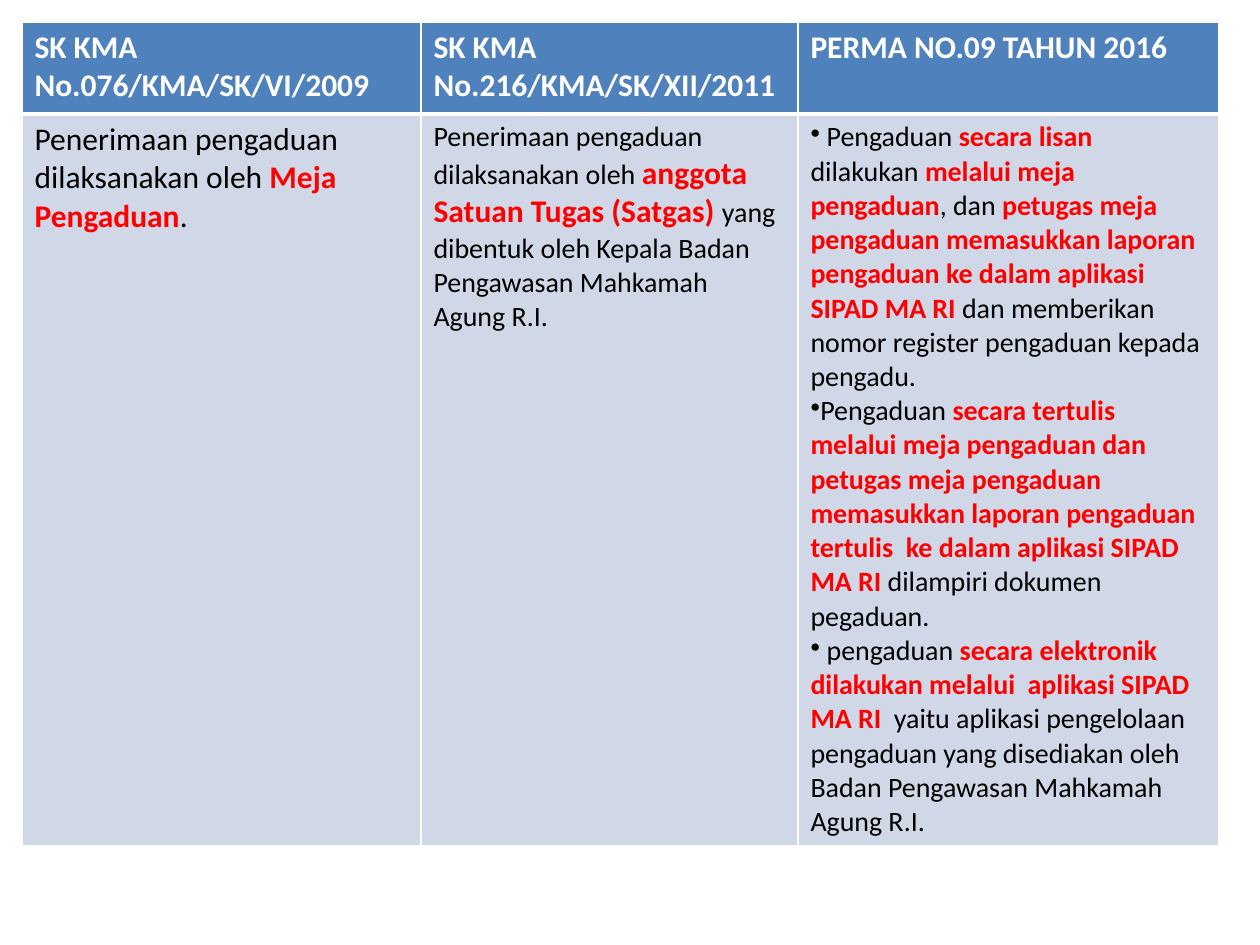
from lxml import etree
from pptx import Presentation
from pptx import util as u
from pptx.dml.color import RGBColor
from pptx.oxml import ns

PX = 914400 // 126
COLORS = {"header": "4F81BD", "body": "D0D8E8", "white": "FFFFFF",
          "plain": "000000", "emphasis": "FF0000"}
FONT = "Calibri"
LEFT, TOP = 22, 22
COLUMN_WIDTHS = [399, 377, 421]
ROW_HEIGHTS = [92, 721]
HEADER_SIZE = 18

HEADERS = ["SK KMA No.076/KMA/SK/VI/2009", "SK KMA No.216/KMA/SK/XII/2011",
           "PERMA NO.09 TAHUN 2016"]

# In each paragraph, plain and emphasised pieces alternate, plain first.
BODIES = [
    {"plain": 18, "emphasis": 18, "bullet": False, "paragraphs": [
        ["Penerimaan pengaduan dilaksanakan oleh ", "Meja Pengaduan", "."]]},
    {"plain": 16, "emphasis": 18, "bullet": False, "paragraphs": [
        ["Penerimaan pengaduan dilaksanakan oleh ",
         "anggota Satuan Tugas (Satgas) ",
         "yang dibentuk oleh Kepala Badan Pengawasan Mahkamah Agung R.I."]]},
    {"plain": 16, "emphasis": 16, "bullet": True, "paragraphs": [
        [" Pengaduan ", "secara lisan ", "dilakukan ", "melalui meja pengaduan", ", dan ",
         "petugas meja pengaduan memasukkan laporan pengaduan ke dalam aplikasi SIPAD MA RI ",
         "dan memberikan nomor register pengaduan kepada pengadu."],
        ["Pengaduan ",
         "secara tertulis melalui meja pengaduan dan petugas meja pengaduan "
         "memasukkan laporan pengaduan tertulis  ke dalam aplikasi SIPAD MA RI ",
         "dilampiri dokumen pegaduan."],
        [" pengaduan ", "secara elektronik  dilakukan melalui  aplikasi SIPAD MA RI  ",
         "yaitu aplikasi pengelolaan pengaduan yang disediakan oleh "
         "Badan Pengawasan Mahkamah Agung R.I."]]},
]


def color(name):
    return RGBColor.from_string(COLORS[name])


def style_cell(cell, fill, thick_side):
    """Draw white borders, 3 pt on thick_side and 1 pt elsewhere, then fill."""
    properties = cell._tc.get_or_add_tcPr()
    for side in "LRTB":
        width = u.Pt(3 if side == thick_side else 1)
        line = etree.SubElement(properties, ns.qn(f"a:ln{side}"), w=str(width))
        solid = etree.SubElement(line, ns.qn("a:solidFill"))
        etree.SubElement(solid, ns.qn("a:srgbClr"), val=COLORS["white"])
    cell.fill.solid()
    cell.fill.fore_color.rgb = color(fill)


def write_header(cell, wording):
    style_cell(cell, "header", "B")
    cell.text = wording
    font = cell.text_frame.paragraphs[0].font
    font.name, font.size, font.bold = FONT, u.Pt(HEADER_SIZE), True
    font.color.rgb = color("white")


def write_body(cell, body):
    style_cell(cell, "body", "T")
    frame = cell.text_frame
    for number, pieces in enumerate(body["paragraphs"]):
        paragraph = frame.add_paragraph() if number else frame.paragraphs[0]
        paragraph.font.name = FONT
        if body["bullet"]:
            etree.SubElement(paragraph._p.get_or_add_pPr(), ns.qn("a:buChar"), char="•")
            # The bullet element has to precede the paragraph's default font.
            properties = paragraph._p.get_or_add_pPr()
            properties.append(properties.find(ns.qn("a:defRPr")))
        for index, piece in enumerate(pieces):
            kind = "emphasis" if index % 2 else "plain"
            run = paragraph.add_run()
            run.text = piece
            run.font.name, run.font.size = FONT, u.Pt(body[kind])
            run.font.bold = kind == "emphasis"
            run.font.color.rgb = color(kind)


def main():
    presentation = Presentation()
    presentation.slide_width, presentation.slide_height = u.Inches(10), u.Inches(7.5)
    slide = presentation.slides.add_slide(presentation.slide_layouts[6])
    table = slide.shapes.add_table(
        len(ROW_HEIGHTS), len(COLUMN_WIDTHS), LEFT * PX, TOP * PX,
        sum(COLUMN_WIDTHS) * PX, sum(ROW_HEIGHTS) * PX).table
    for column, width in zip(table.columns, COLUMN_WIDTHS):
        column.width = width * PX
    for row, height in zip(table.rows, ROW_HEIGHTS):
        row.height = height * PX
    for index, (header, body) in enumerate(zip(HEADERS, BODIES)):
        write_header(table.cell(0, index), header)
        write_body(table.cell(1, index), body)
    presentation.save("out.pptx")


if __name__ == "__main__":
    main()
